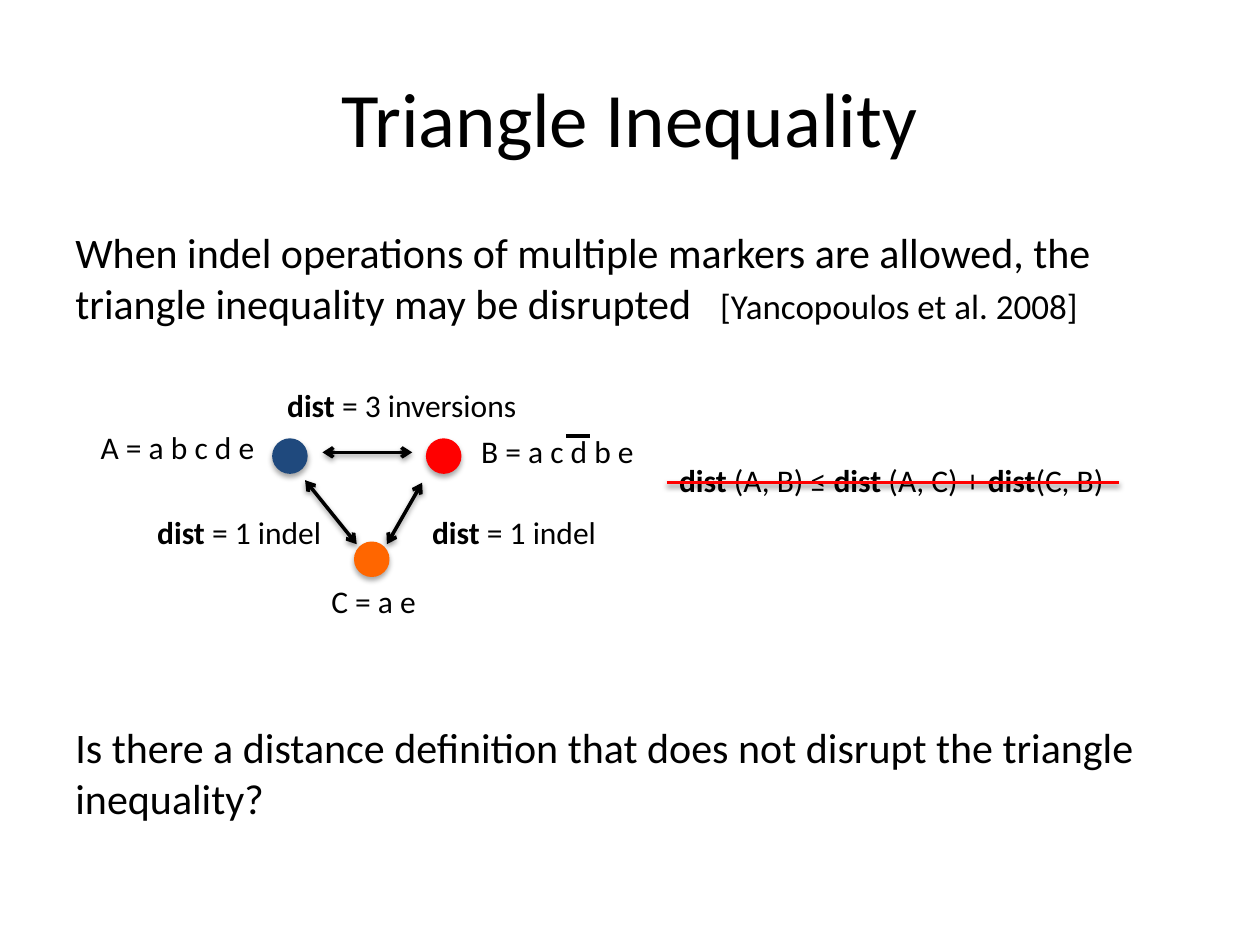
from lxml import etree
from pptx import Presentation
from pptx.dml.color import RGBColor
from pptx.enum.shapes import MSO_CONNECTOR, MSO_SHAPE
from pptx.enum.text import MSO_ANCHOR, MSO_AUTO_SIZE, PP_ALIGN
from pptx.oxml.ns import qn
from pptx.util import Cm, Pt

STRAIGHT = MSO_CONNECTOR.STRAIGHT
OVAL = MSO_SHAPE.OVAL
TOP, MIDDLE = MSO_ANCHOR.TOP, MSO_ANCHOR.MIDDLE
LEFT, CENTER = PP_ALIGN.LEFT, PP_ALIGN.CENTER
NO_AUTOFIT, GROW = MSO_AUTO_SIZE.NONE, MSO_AUTO_SIZE.SHAPE_TO_FIT_TEXT

FONT = "Calibri"
BLACK, RED, BLUE, ORANGE = "000000", "FF0000", "1F497D", "FF6600"
MARGIN, CONTENT_WIDTH = 1.27, 22.86
LABEL_HEIGHT = 1.02
NODE_SIZE = 0.61


def color(hex_value):
    return RGBColor.from_string(hex_value)


def add_text(slide, runs, left, top, width, height=LABEL_HEIGHT, size=18, wrap=False,
             autofit=GROW, align=LEFT, anchor=TOP, space_before=0, tab=None):
    """Add one paragraph; each run is (text, format), with bold and size as options."""
    box = slide.shapes.add_textbox(Cm(left), Cm(top), Cm(width), Cm(height))
    frame = box.text_frame
    frame.word_wrap = wrap
    frame.auto_size = autofit
    frame.vertical_anchor = anchor
    paragraph = frame.paragraphs[0]
    paragraph.alignment = align
    paragraph.space_before = Pt(space_before)
    if tab is not None:
        tabs = etree.SubElement(paragraph._p.get_or_add_pPr(), qn("a:tabLst"))
        etree.SubElement(tabs, qn("a:tab"), pos=str(Cm(tab)), algn="l")
    for text, style in runs:
        run = paragraph.add_run()
        run.text = text
        run.font.name = FONT
        run.font.size = Pt(style.get("size", size))
        run.font.bold = style.get("bold", False)
        run.font.color.rgb = color(BLACK)


def plain(text):
    return text, {}


def bold(text):
    return text, {"bold": True}


def set_shadow(shape, opacity, distance):
    """Give a soft shadow straight below; zero opacity means no shadow."""
    effects = etree.SubElement(shape._element.spPr, qn("a:effectLst"))
    if opacity:
        shadow = etree.SubElement(effects, qn("a:outerShdw"), blurRad=str(Pt(3.1)),
                                  dist=str(Pt(distance)), dir="5400000", rotWithShape="0")
        shadow_color = etree.SubElement(shadow, qn("a:srgbClr"), val=BLACK)
        etree.SubElement(shadow_color, qn("a:alpha"), val=str(opacity * 1000))


def add_node(slide, left, top, fill):
    node = slide.shapes.add_shape(OVAL, Cm(left), Cm(top), Cm(NODE_SIZE), Cm(NODE_SIZE))
    node.fill.solid()
    node.fill.fore_color.rgb = color(fill)
    node.line.color.rgb = color(fill)
    node.line.width = Pt(3)
    set_shadow(node, 35, 1.8)


def add_line(slide, start, end, stroke=BLACK, arrows=False, shadow=38):
    line = slide.shapes.add_connector(STRAIGHT, *(Cm(value) for value in (*start, *end)))
    line.line.color.rgb = color(stroke)
    line.line.width = Pt(2)
    if arrows:
        for tag in ("a:headEnd", "a:tailEnd"):
            etree.SubElement(line.line._get_or_add_ln(), qn(tag), type="arrow")
    set_shadow(line, shadow, 1.6)


def main():
    presentation = Presentation()
    presentation.slide_width, presentation.slide_height = Cm(25.4), Cm(19.05)
    slide = presentation.slides.add_slide(presentation.slide_layouts[6])

    # Title and statements
    add_text(slide, [plain("Triangle Inequality")], MARGIN, 0.76, CONTENT_WIDTH, 3.18,
             size=44, wrap=True, autofit=NO_AUTOFIT, align=CENTER, anchor=MIDDLE)
    add_text(slide, [plain("When indel operations of multiple markers are allowed, "
                           "the triangle inequality may be disrupted\t"),
                     ("[Yancopoulos et al. 2008]", {"size": 20})],
             MARGIN, 4.45, CONTENT_WIDTH, 2.84, size=24, wrap=True,
             autofit=NO_AUTOFIT, space_before=4.8, tab=13)
    add_text(slide, [plain("Is there a distance definition that does not disrupt "
                           "the triangle inequality?")],
             MARGIN, 14.43, CONTENT_WIDTH, 2.31, size=24, wrap=True)

    # Genomes at the triangle's corners
    for text, left, top, width in (("A = a b c d e", 1.78, 8.51, 3.63),
                                   ("B = a c d b e", 9.45, 8.59, 3.63),
                                   ("C = a e", 6.43, 11.61, 2.24)):
        add_text(slide, [plain(text)], left, top, width)
    for left, top, fill in ((8.64, 8.89, RED), (5.54, 8.89, BLUE), (7.19, 10.97, ORANGE)):
        add_node(slide, left, top, fill)

    # Distances along the triangle's sides
    for start, end in (((6.15, 9.68), (7.19, 10.97)),
                       ((8.51, 9.73), (7.8, 10.97)),
                       ((6.5, 9.12), (8.31, 9.12))):
        add_line(slide, start, end, arrows=True)
    for text, left, top, width in (("= 3 inversions", 5.54, 7.65, 5.21),
                                   ("= 1 indel", 2.92, 10.21, 3.91),
                                   ("= 1 indel", 8.46, 10.21, 3.91)):
        add_text(slide, [bold("dist "), plain(text)], left, top, width)

    # Struck-out inequality
    add_text(slide, [bold("dist "), plain("(A, B) ≤ "), bold("dist "),
                     plain("(A, C) + "), bold("dist"), plain("(C, B)")], 13.44, 9.17, 9.12)
    add_line(slide, (13.44, 9.73), (22.56, 9.73), stroke=RED)

    # Bar over the inverted marker d
    add_line(slide, (11.89, 8.79), (11.4, 8.79), shadow=0)

    presentation.save("out.pptx")


if __name__ == "__main__":
    main()
